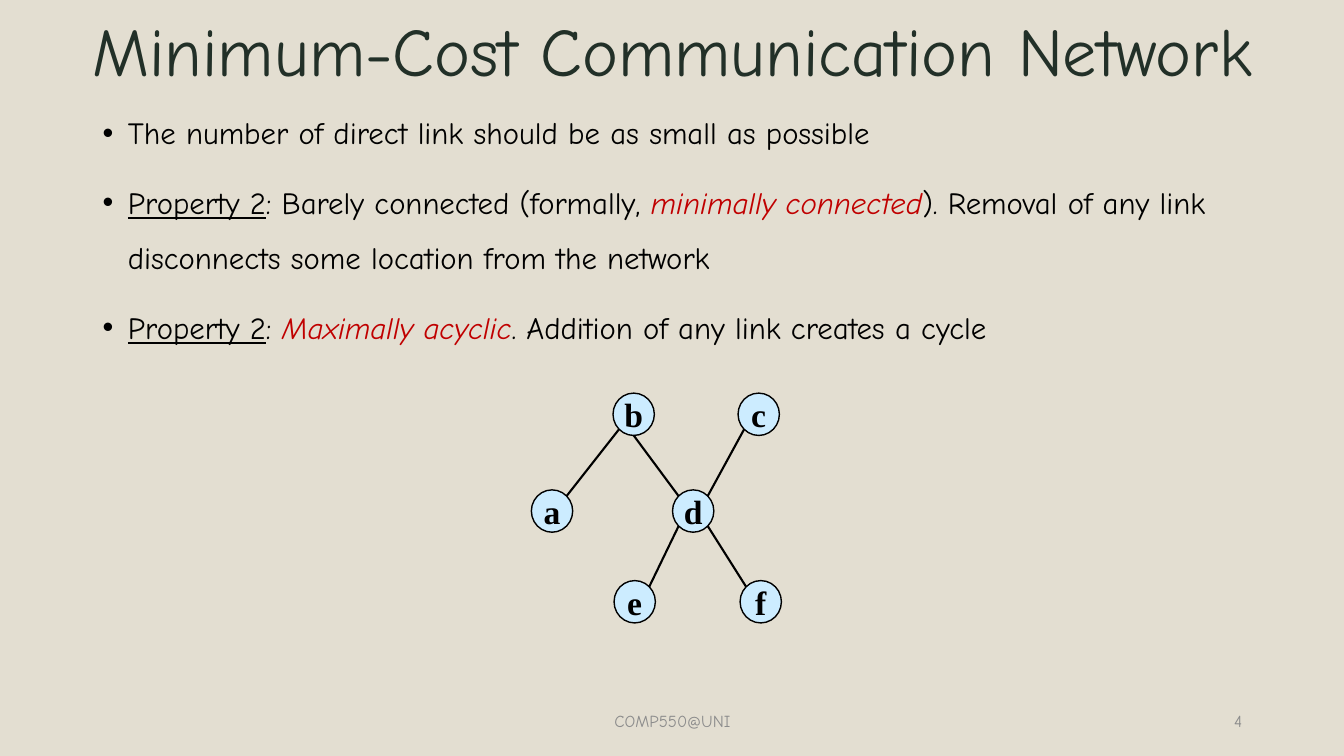
from lxml import etree
from pptx import Presentation
from pptx.dml.color import RGBColor
from pptx.enum.shapes import MSO_CONNECTOR, MSO_SHAPE
from pptx.enum.text import MSO_ANCHOR, PP_ALIGN
from pptx.oxml import parse_xml
from pptx.oxml.ns import qn
from pptx.util import Inches, Pt

ELLIPSE = MSO_SHAPE.OVAL
STRAIGHT = MSO_CONNECTOR.STRAIGHT
TOP, MIDDLE = MSO_ANCHOR.TOP, MSO_ANCHOR.MIDDLE
LEFT, CENTER, RIGHT = PP_ALIGN.LEFT, PP_ALIGN.CENTER, PP_ALIGN.RIGHT

BEIGE = RGBColor(0xE3, 0xDE, 0xD1)
DARK_GREEN = RGBColor(0x22, 0x30, 0x28)
BLACK = RGBColor(0, 0, 0)
RED = RGBColor(0xC0, 0, 0)
GRAY = RGBColor(0x8C, 0x8C, 0x8C)
LIGHT_BLUE = RGBColor(0xCC, 0xEC, 0xFF)
BODY_FONT = "Comic Neue"
NODE_FONT = "Times New Roman"

presentation = Presentation()
presentation.slide_width = Inches(13.33)
presentation.slide_height = Inches(7.5)
slide = presentation.slides.add_slide(presentation.slide_layouts[6])
slide.background.fill.solid()
slide.background.fill.fore_color.rgb = BEIGE


def style_run(run, size, color, font_name=BODY_FONT):
    run.font.name = font_name
    run.font.size = Pt(size)
    run.font.color.rgb = color


def add_text(box, text, size, color, align, anchor):
    shape = slide.shapes.add_textbox(*[Inches(length) for length in box])
    frame = shape.text_frame
    frame.word_wrap = True
    frame.vertical_anchor = anchor
    frame.text = text
    for paragraph in frame.paragraphs:
        paragraph.alignment = align
        for run in paragraph.runs:
            style_run(run, size, color)
    return frame


title = add_text((0, 0.03, 13.33, 1.02), "Minimum-Cost Communication Network",
                 48.6, DARK_GREEN, CENTER, MIDDLE).paragraphs[0]
title.line_spacing = 0.9
title_shadow = parse_xml(
    '<a:effectLst xmlns:a="http://schemas.openxmlformats.org/drawingml/2006/main">'
    '<a:outerShdw blurRad="38100" dist="38100" dir="2700000" algn="tl">'
    '<a:srgbClr val="000000"><a:alpha val="43000"/></a:srgbClr>'
    '</a:outerShdw></a:effectLst>')
title.runs[0].font._element.find(qn("a:solidFill")).addnext(title_shadow)

PLAIN, UNDERLINED, EMPHASIS = range(3)
bullets = [
    [("The number of direct link should be as small as possible", PLAIN)],
    [("Property 2", UNDERLINED), (": Barely connected (formally, ", PLAIN),
     ("minimally connected", EMPHASIS),
     ("). Removal of any link disconnects some location from the network", PLAIN)],
    [("Property 2", UNDERLINED), (": ", PLAIN), ("Maximally acyclic", EMPHASIS),
     (". Addition of any link creates a cycle", PLAIN)],
]
body = add_text((0.92, 0.9, 11.67, 6), "", 22, BLACK, LEFT, TOP)
for index, parts in enumerate(bullets):
    paragraph = body.add_paragraph() if index else body.paragraphs[0]
    paragraph.line_spacing = 1.5
    paragraph.space_before = Pt(10)
    properties = paragraph._p.get_or_add_pPr()
    properties.set("marL", str(Inches(0.25)))
    properties.set("indent", str(-Inches(0.25)))
    etree.SubElement(properties, qn("a:buFont")).set("typeface", "Arial")
    etree.SubElement(properties, qn("a:buChar")).set("char", "•")
    for text, kind in parts:
        run = paragraph.add_run()
        run.text = text
        style_run(run, 22, RED if kind == EMPHASIS else BLACK)
        run.font.underline = kind == UNDERLINED
        run.font.italic = kind == EMPHASIS

add_text((4.42, 6.95, 4.5, 0.4), "COMP550@UNI", 12, GRAY, CENTER, MIDDLE)
add_text((9.42, 6.95, 3, 0.4), "4", 12, GRAY, RIGHT, MIDDLE)

NODE_WIDTH, NODE_HEIGHT = 0.41, 0.42
UPPER, CENTRAL, LOWER = 3.9, 4.86, 5.76
nodes = {"a": (5.27, CENTRAL), "b": (6.08, UPPER), "c": (7.32, UPPER),
         "d": (6.67, CENTRAL), "e": (6.09, LOWER), "f": (7.34, LOWER)}
for name, (left, top) in nodes.items():
    node = slide.shapes.add_shape(ELLIPSE, Inches(left), Inches(top),
                                  Inches(NODE_WIDTH), Inches(NODE_HEIGHT))
    node.shadow.inherit = False
    node.fill.solid()
    node.fill.fore_color.rgb = LIGHT_BLUE
    node.line.color.rgb = BLACK
    node.line.width = Pt(1)
    frame = node.text_frame
    frame.word_wrap = False
    frame.vertical_anchor = MIDDLE
    frame.text = name
    frame.paragraphs[0].alignment = CENTER
    style_run(frame.paragraphs[0].runs[0], 24, BLACK, NODE_FONT)
    frame.paragraphs[0].runs[0].font.bold = True

NEAR, FAR = 0.15, 0.85
TOP_LEFT, TOP_RIGHT = (NEAR, NEAR), (FAR, NEAR)
BOTTOM_LEFT, BOTTOM_RIGHT = (NEAR, FAR), (FAR, FAR)
BOTTOM = (0.5, 1)
links = [("d", TOP_LEFT, "b", BOTTOM), ("d", TOP_RIGHT, "c", BOTTOM_LEFT),
         ("a", TOP_RIGHT, "b", BOTTOM_LEFT), ("e", TOP_RIGHT, "d", BOTTOM_LEFT),
         ("f", TOP_LEFT, "d", BOTTOM_RIGHT)]
for start, start_site, end, end_site in links:
    points = []
    for name, (across, down) in ((start, start_site), (end, end_site)):
        left, top = nodes[name]
        points += [Inches(left + across * NODE_WIDTH), Inches(top + down * NODE_HEIGHT)]
    link = slide.shapes.add_connector(STRAIGHT, *points)
    link.line.color.rgb = BLACK
    link.line.width = Pt(1.5)
    etree.SubElement(link._element.spPr, qn("a:effectLst"))

presentation.save("out.pptx")
